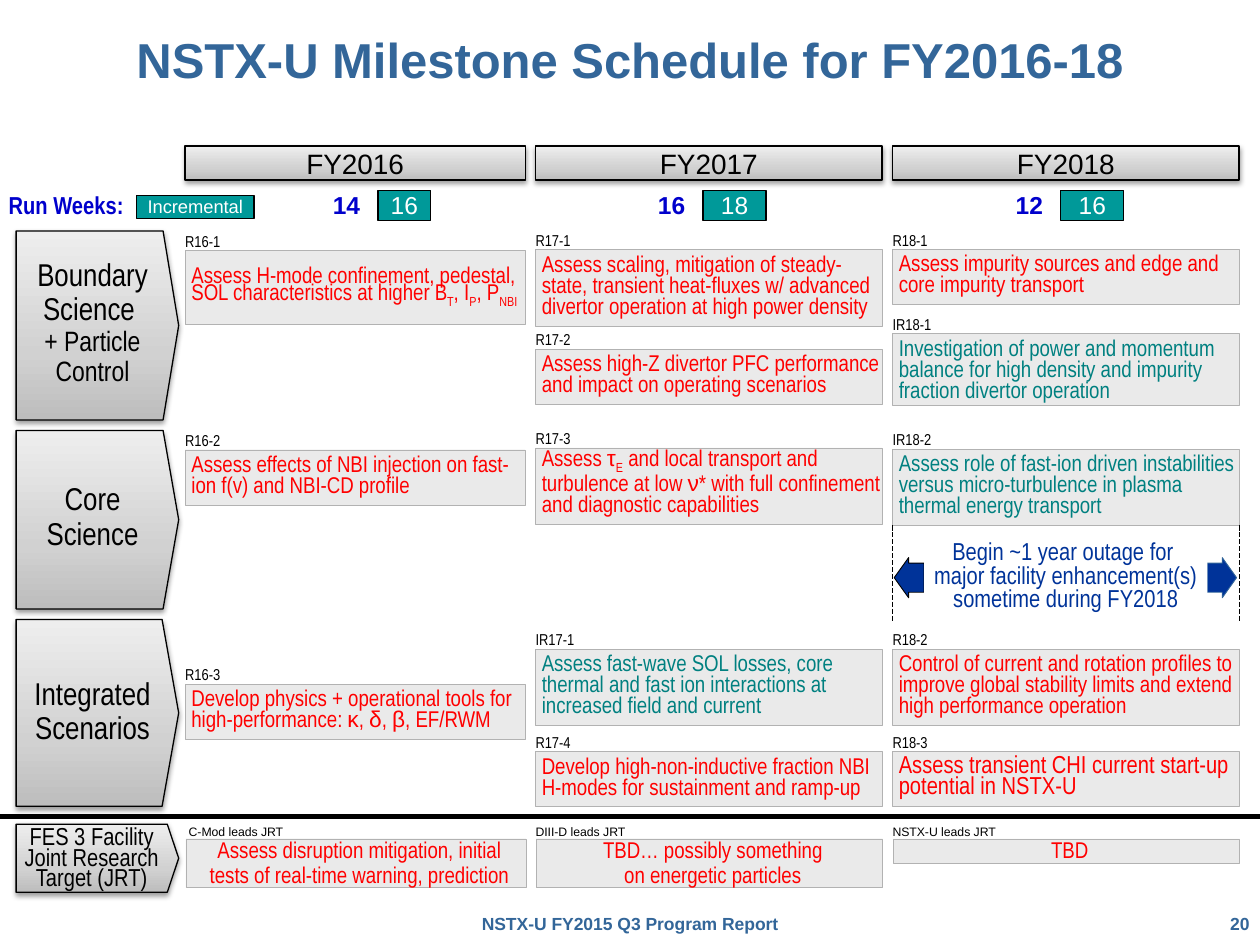
"""Build the three-year milestone schedule slide."""
from copy import deepcopy
from dataclasses import dataclass
from itertools import groupby
from typing import NamedTuple

from lxml import etree
from pptx import Presentation
from pptx import util as u
from pptx.dml.color import RGBColor
from pptx.enum import dml, shapes, text
from pptx.oxml.ns import qn

SANS, NARROW = "Arial", "Arial Narrow"
BLACK, WHITE, RED, GREEN = "000000", "FFFFFF", "FF0000", "008080"
STEEL, BLUE, NAVY, TEAL = "336699", "0000CC", "003399", "009999"
PANEL, PANEL_EDGE = "EAEAEA", "B2B2B2"
STEEL_GRADIENT = ((0, "BDBDBD"), (0.35, "D1D1D1"), (1, "EEEEEE"))
LEFT, CENTER, RIGHT = text.PP_ALIGN.LEFT, text.PP_ALIGN.CENTER, text.PP_ALIGN.RIGHT
TOP, MIDDLE = text.MSO_ANCHOR.TOP, text.MSO_ANCHOR.MIDDLE
RECT = shapes.MSO_SHAPE.RECTANGLE
RIGHT_ARROW, LEFT_ARROW = shapes.MSO_SHAPE.RIGHT_ARROW, shapes.MSO_SHAPE.LEFT_ARROW
SIDE_INSETS = (7.2, 0, 7.2, 0)
PANEL_INSETS = (3.6, 3.6, 0, 3.6)
ROW_INSETS = (0, 3.6, 0, 3.6)


class Box(NamedTuple):
    left: float
    top: float
    width: float
    height: float


@dataclass
class Year:
    name: str
    left: float
    width: float
    base_weeks: str
    extra_weeks: str
    weeks_left: float
    extra_width: float
    jrt_leader: str
    jrt_lines: list[str]
    jrt_height: float


@dataclass
class Milestone:
    code: str
    year: int
    top: float
    height: float
    goal: str
    size: float = 13
    anchor: int = TOP


@dataclass
class Topic:
    top: float
    height: float
    tip: float
    label_top: float
    label_height: float
    lines: list[str]
    sizes: tuple[float, ...] = (18,)


YEARS = [
    Year("FY2016", 105.8, 194.4, "14", "16", 180, 30.2, "C-Mod leads JRT",
         ["Assess disruption mitigation, initial", "tests of real-time warning, prediction"], 28),
    Year("FY2017", 306, 198, "16", "18", 365.8, 36, "DIII-D leads JRT",
         ["TBD… possibly something", "on energetic particles"], 28),
    Year("FY2018", 510, 198, "12", "16", 570.2, 36, "NSTX-U leads JRT", ["TBD"], 14.2),
]

MILESTONES = [
    Milestone("R16-1", 0, 143.3, 42.3, "Assess H-mode confinement, pedestal, "
              "SOL characteristics at higher B|T|, I|P|, P|NBI|", anchor=MIDDLE),
    Milestone("R16-2", 0, 257, 31.5,
              "Assess effects of NBI injection on fast-ion f(v) and NBI-CD profile"),
    Milestone("R16-3", 0, 391, 31.5,
              "Develop physics + operational tools for high-performance: κ, δ, β, EF/RWM"),
    Milestone("R17-1", 1, 142.7, 43.7, "Assess scaling, mitigation of steady-state, transient "
              "heat-fluxes w/ advanced divertor operation at high power density"),
    Milestone("R17-2", 1, 199.5, 31.5,
              "Assess high-Z divertor PFC performance and impact on operating scenarios"),
    Milestone("R17-3", 1, 256, 43.7, "Assess τ|E| and local transport and turbulence at low "
              "ν* with full confinement and diagnostic capabilities"),
    Milestone("IR17-1", 1, 371, 43.7, "Assess fast-wave SOL losses, core thermal and fast ion "
              "interactions at increased field and current"),
    Milestone("R17-4", 1, 429.5, 31.5,
              "Develop high-non-inductive fraction NBI H-modes for sustainment and ramp-up"),
    Milestone("R18-1", 2, 142.5, 31.5,
              "Assess impurity sources and edge and core impurity transport"),
    Milestone("IR18-1", 2, 190.7, 41, "Investigation of power and momentum balance for high "
              "density and impurity fraction divertor operation"),
    Milestone("IR18-2", 2, 256.7, 43.5, "Assess role of fast-ion driven instabilities versus "
              "micro-turbulence in plasma thermal energy transport"),
    Milestone("R18-2", 2, 371, 43.5, "Control of current and rotation profiles to improve "
              "global stability limits and extend high performance operation"),
    Milestone("R18-3", 2, 429.5, 31.5,
              "Assess transient CHI current start-up potential in NSTX-U", 14),
]

TOPICS = [
    Topic(132, 108, 0.096, 144.7, 81.4, ["Boundary Science ", "+ Particle Control"], (18, 16)),
    Topic(246, 102, 0.096, 272.9, 46.8, ["Core Science"]),
    Topic(354, 106.8, 0.102, 383.8, 46.8, ["Integrated Scenarios"]),
]


def color(hex_code: str) -> RGBColor:
    return RGBColor.from_string(hex_code)


def write(shape, *lines, sizes=(13,), ink=BLACK, font=SANS, bold=False, align=CENTER,
          anchor=TOP, insets=(0, 0, 0, 0), spacing=None):
    """Fill a shape with text; segments between bars are subscripts, Greek is sans."""
    frame = shape.text_frame
    frame.word_wrap, frame.vertical_anchor = True, anchor
    frame.margin_left, frame.margin_top, frame.margin_right, frame.margin_bottom = map(u.Pt, insets)
    for index, line in enumerate(lines):
        para = frame.paragraphs[0] if index == 0 else frame.add_paragraph()
        para.alignment = align
        if spacing:
            para.line_spacing = spacing
        for part, segment in enumerate(line.split("|")):
            for greek, letters in groupby(segment, lambda letter: "α" <= letter <= "ω"):
                run = para.add_run()
                run.text = "".join(letters)
                run.font.name = SANS if greek else font
                run.font.size = u.Pt(sizes[index % len(sizes)])
                run.font.bold = bold
                run.font.color.rgb = color(ink)
                if part % 2:
                    run.font._element.set("baseline", "-25000")


def label(slide, box: Box, *lines: str, **style):
    write(slide.shapes.add_textbox(*map(u.Pt, box)), *lines, **style)


def block(slide, box: Box, fill=None, edge=None, weight=0.75, kind=RECT, adjust=()):
    """Add a preset shape, with the steel gradient and shadow when no fill is given."""
    shape = slide.shapes.add_shape(kind, *map(u.Pt, box))
    for index, value in enumerate(adjust):
        shape.adjustments[index] = value
    shape.shadow.inherit = False
    if fill:
        shape.fill.solid()
        shape.fill.fore_color.rgb = color(fill)
    else:
        add_steel(shape)
    if edge:
        shape.line.color.rgb, shape.line.width = color(edge), u.Pt(weight)
    else:
        shape.line.fill.background()
    return shape


def add_steel(shape):
    shape.fill.gradient()
    shape.fill.gradient_angle = 90
    props = shape._element.spPr
    stops = props.find(qn("a:gradFill")).find(qn("a:gsLst"))
    stops.append(deepcopy(stops[0]))
    for stop, (position, shade) in zip(shape.fill.gradient_stops, STEEL_GRADIENT):
        stop.position, stop.color.rgb = position, color(shade)
    shadow = etree.SubElement(props.find(qn("a:effectLst")), qn("a:outerShdw"), blurRad="39370",
                              dist="20320", dir="5400000", rotWithShape="0")
    tint = etree.SubElement(shadow, qn("a:srgbClr"), val=BLACK)
    etree.SubElement(tint, qn("a:alpha"), val="38000")


def rule(slide, start: tuple[float, float], end: tuple[float, float], weight: float, dash=None):
    line = slide.shapes.add_connector(shapes.MSO_CONNECTOR.STRAIGHT, *map(u.Pt, start + end))
    line.line.color.rgb, line.line.width = color(BLACK), u.Pt(weight)
    if dash:
        line.line.dash_style = dash
    etree.SubElement(line._element.spPr, qn("a:effectLst"))


def draw_year(slide, year: Year):
    header = block(slide, Box(year.left, 83.5, year.width, 19.4), edge=BLACK)
    write(header, year.name, sizes=(16,), insets=SIDE_INSETS)
    label(slide, Box(year.weeks_left, 108.7, 36, 17.3), year.base_weeks,
          sizes=(14,), ink=BLUE, bold=True, insets=SIDE_INSETS)
    extra = block(slide, Box(year.weeks_left + 36, 108.7, year.extra_width, 17.3), TEAL, BLACK)
    write(extra, year.extra_weeks, sizes=(14,), ink=WHITE, insets=SIDE_INSETS)
    target = block(slide, Box(year.left + 0.4, 479.3, year.width, year.jrt_height),
                   PANEL, PANEL_EDGE, 0.25)
    write(target, *year.jrt_lines, ink=RED, font=NARROW, insets=(3.6, 0, 0, 0), spacing=u.Pt(14))
    offset = 2 if year is YEARS[0] else 0
    label(slide, Box(year.left + offset, 471, 90, 8.6), year.jrt_leader, sizes=(7,), align=LEFT)


def draw_milestone(slide, item: Milestone):
    year = YEARS[item.year]
    goal = block(slide, Box(year.left, item.top, year.width, item.height), PANEL, PANEL_EDGE, 0.25)
    write(goal, item.goal, sizes=(item.size,), ink=GREEN if item.code.startswith("I") else RED,
          font=NARROW, align=LEFT, anchor=item.anchor, insets=PANEL_INSETS, spacing=u.Pt(12))
    label(slide, Box(year.left, item.top - 10.9, 40, 10.8), item.code,
          sizes=(9,), font=NARROW, align=LEFT)


def draw_topic(slide, topic: Topic):
    block(slide, Box(9.2, topic.top, 92.9, topic.height), edge=BLACK, kind=RIGHT_ARROW,
          adjust=(1, topic.tip))
    label(slide, Box(5.8, topic.label_top, 90.6, topic.label_height), *topic.lines,
          sizes=topic.sizes, font=NARROW, insets=PANEL_INSETS, spacing=0.9)


def draw_outage(slide):
    for x in (510, 708.3):
        rule(slide, (x, 300.2), (x, 355), 1, dml.MSO_LINE.SQUARE_DOT)
    for kind, left, width, edge in ((RIGHT_ARROW, 689.8, 16.8, STEEL), (LEFT_ARROW, 511, 17, BLACK)):
        block(slide, Box(left, 318.6, width, 23), NAVY, edge, 0.5, kind, (0.722, 0.486))
    notice = block(slide, Box(528, 306, 162, 48.2), WHITE)
    write(notice, "Begin ~1 year outage for ", "major facility enhancement(s) sometime during FY2018",
          sizes=(14,), ink=NAVY, font=NARROW, insets=ROW_INSETS, spacing=0.8)


def main():
    deck = Presentation()
    deck.slide_width, deck.slide_height = u.Pt(720), u.Pt(540)
    slide = deck.slides.add_slide(deck.slide_layouts[6])
    footer = dict(sizes=(10,), ink=STEEL, bold=True, insets=ROW_INSETS)
    label(slide, Box(666, 518.4, 48, 19.4), "20", align=RIGHT, **footer)
    label(slide, Box(72, 518.4, 576, 19.4), "NSTX-U FY2015 Q3 Program Report", **footer)
    label(slide, Box(0, 0, 720, 72), "NSTX-U Milestone Schedule for FY2016-18", sizes=(28,),
          ink=STEEL, bold=True, anchor=MIDDLE, insets=(7.2, 3.6, 7.2, 3.6), spacing=0.9)
    rule(slide, (0, 466.6), (720, 466.6), 3)
    for year in YEARS:
        draw_year(slide, year)
    label(slide, Box(3.6, 111.6, 68.4, 14.4), "Run Weeks:", sizes=(14,), ink=BLUE, font=NARROW,
          bold=True, anchor=MIDDLE, insets=ROW_INSETS, spacing=0.8)
    legend = block(slide, Box(78, 111.6, 67.2, 13.4), TEAL, BLACK)
    write(legend, "Incremental", sizes=(10.5,), ink=WHITE)
    for topic in TOPICS:
        draw_topic(slide, topic)
    joint = block(slide, Box(9.2, 471, 92.9, 38.9), edge=BLACK, kind=RIGHT_ARROW, adjust=(1, 0.167))
    write(joint, "FES 3 Facility Joint Research Target (JRT)", sizes=(14,), font=NARROW,
          anchor=MIDDLE, insets=(0, 2.2, 0, 0), spacing=0.7)
    for item in MILESTONES:
        draw_milestone(slide, item)
    draw_outage(slide)
    deck.save("out.pptx")


if __name__ == "__main__":
    main()
